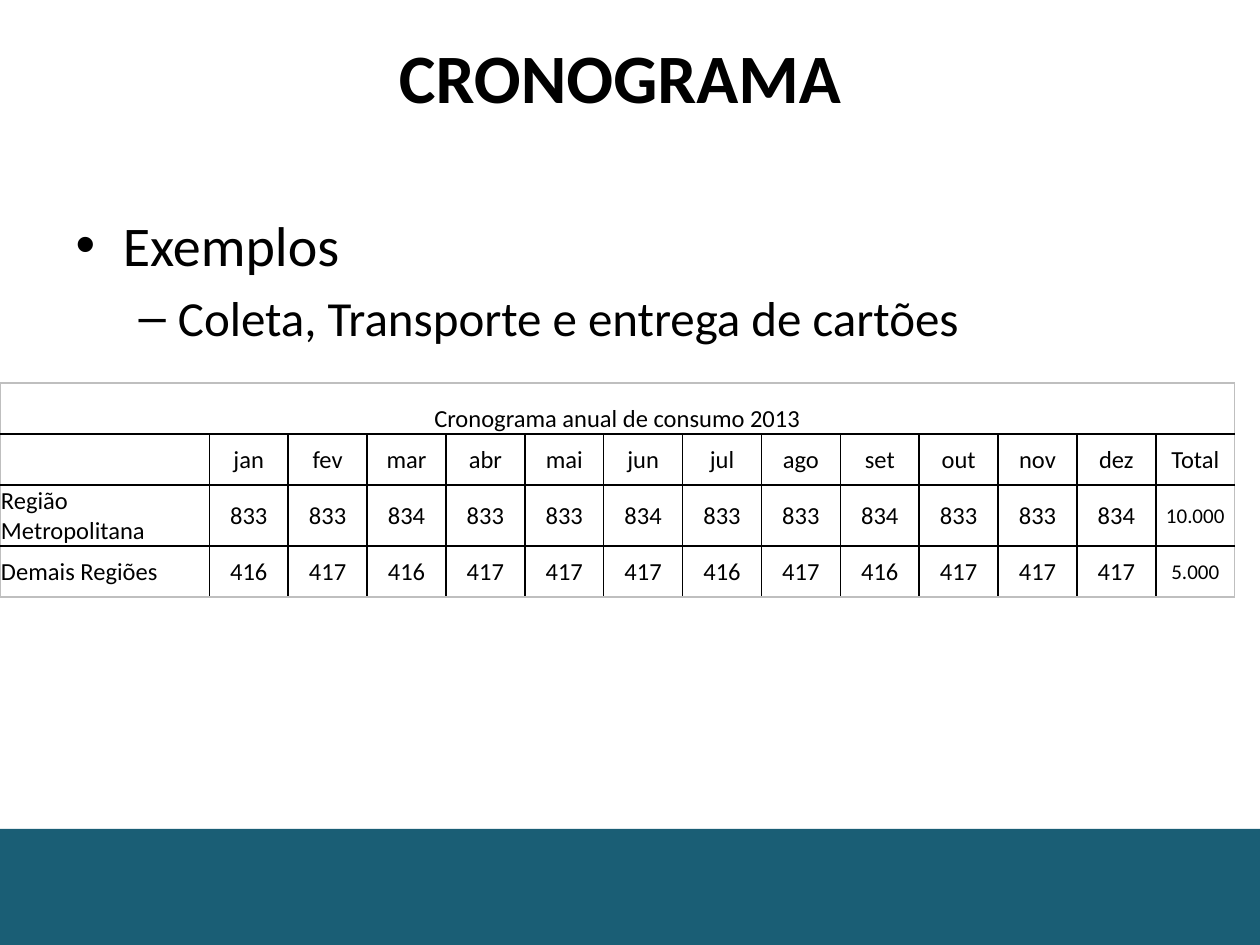
from lxml.etree import SubElement
from pptx import Presentation
from pptx.dml.color import RGBColor
from pptx.enum.shapes import MSO_SHAPE
from pptx.enum.text import MSO_ANCHOR, PP_ALIGN
from pptx.oxml.ns import qn
from pptx.util import Cm, Pt

COLORS = {"text": "000000", "band": "1A5E75", "grid": "000000", "edge": "BFBFBF"}
FONT = "Calibri"


def write(para, text, size, align=PP_ALIGN.CENTER, bold=False):
    para.alignment = align
    span = para.add_run()
    span.text = text
    span.font.name = FONT
    span.font.size = Pt(size)
    span.font.bold = bold
    span.font.color.rgb = RGBColor.from_string(COLORS["text"])


def set_borders(cell, side_colors):
    """Draw 1 pt cell borders; side_colors maps L, R, T, B in that order."""
    properties = cell._tc.get_or_add_tcPr()
    for side, color in side_colors.items():
        line = SubElement(properties, qn(f"a:ln{side}"), w=str(Pt(1)))
        fill = SubElement(line, qn("a:solidFill"))
        SubElement(fill, qn("a:srgbClr"), val=color)


deck = Presentation()
deck.slide_width, deck.slide_height = Cm(25.4), Cm(19.05)
page = deck.slides.add_slide(deck.slide_layouts[1])

# Footer band, behind everything else
band = page.shapes.add_shape(MSO_SHAPE.RECTANGLE, Cm(0), Cm(16.71), Cm(25.4), Cm(2.34))
band.shadow.inherit = False
band.fill.solid()
band.fill.fore_color.rgb = RGBColor.from_string(COLORS["band"])
band.line.fill.background()
page.shapes._spTree.insert(2, band._element)

# Title
title = page.shapes.title
title.left, title.top, title.width, title.height = Cm(1.3), Cm(0.53), Cm(22.4), Cm(2.01)
title.text_frame.vertical_anchor = MSO_ANCHOR.MIDDLE
write(title.text_frame.paragraphs[0], "CRONOGRAMA", 39.6, bold=True)

# List: bullets and indents come from the template's levels
body = page.placeholders[1]
body.left, body.top, body.width, body.height = Cm(1.27), Cm(4.11), Cm(22.86), Cm(14.94)
items = [("Exemplos", 32), ("Coleta, Transporte e entrega de cartões", 28)]
for level, (text, size) in enumerate(items):
    para = body.text_frame.add_paragraph() if level else body.text_frame.paragraphs[0]
    para.level = level
    if level == 0:
        para.space_before = Pt(0)
    write(para, text, size, align=PP_ALIGN.JUSTIFY)

# Schedule table
months = "jan fev mar abr mai jun jul ago set out nov dez".split()
metropolitan = "833 833 834 833 833 834 833 833 834 833 833 834".split()
other_regions = "416 417 416 417 417 417 416 417 416 417 417 417".split()
rows = [
    ["Cronograma anual de consumo 2013"] + [""] * 13,
    ["", *months, "Total"],
    ["Região Metropolitana", *metropolitan, "10.000"],
    ["Demais Regiões", *other_regions, "5.000"],
]
last_row, last_column = len(rows) - 1, len(rows[0]) - 1
frame = page.shapes.add_table(len(rows), len(rows[0]), Cm(0), Cm(7.72), Cm(24.89), Cm(4.12))
table = frame.table
table.first_row = table.horz_banding = False
for index, column in enumerate(table.columns):
    column.width = Cm(1.59) if index else Cm(4.22)

for row, values in enumerate(rows):
    table.rows[row].height = Cm(1.03)
    for column, text in enumerate(values):
        cell = table.cell(row, column)
        cell.margin_left = cell.margin_right = cell.margin_top = Cm(0.02)
        cell.margin_bottom = Cm(0)
        cell.vertical_anchor = MSO_ANCHOR.MIDDLE if row else MSO_ANCHOR.BOTTOM
        on_edge = {
            "L": column == 0,
            "R": column == last_column or row == 0,
            "T": row == 0,
            "B": row == last_row,
        }
        set_borders(cell, {side: COLORS["edge" if outer else "grid"]
                           for side, outer in on_edge.items()})
        cell.fill.background()
        if text:
            is_label = row > 1 and column == 0
            is_total = row > 1 and column == last_column
            write(cell.text_frame.paragraphs[0], text, 12 if is_total else 14,
                  align=PP_ALIGN.LEFT if is_label else PP_ALIGN.CENTER)
table.cell(0, 0).merge(table.cell(0, last_column))

deck.save("out.pptx")
